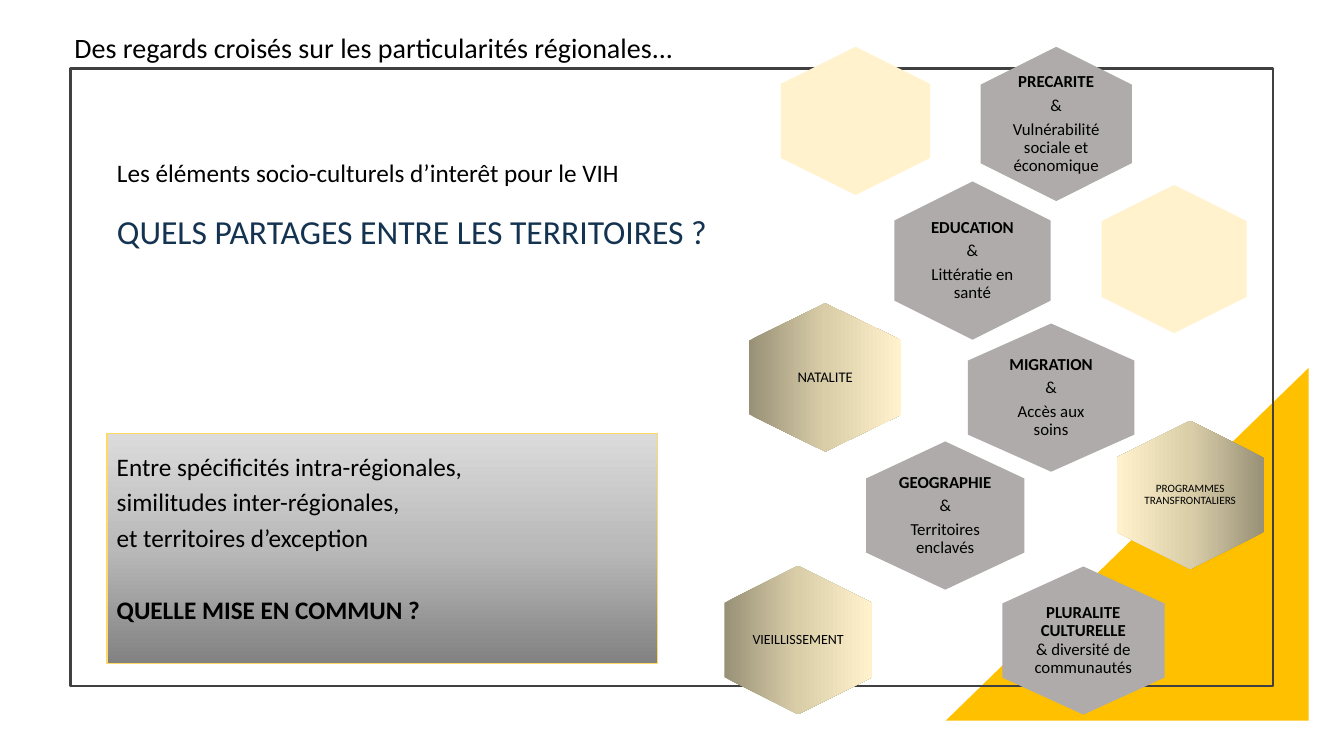
from lxml import etree
from pptx import Presentation
from pptx import util as u
from pptx.dml.color import RGBColor
from pptx.enum import shapes, text
from pptx.oxml import parse_xml
from pptx.oxml.ns import nsdecls, qn

COLORS = {
    "black": "000000", "navy": "143350", "frame": "404040", "gold": "FFC000",
    "grey": "AFABAB", "cream": "FFF2CC", "edge": "FFD966",
}
SAND = ("999177", "DACEA9", "FFF2CC")
STEEL = ("828282", "B9B9B9", "DBDBDB")
FONT = "Calibri"
LINE = 0.9
AFTER = 0.33  # paragraph gap as a share of the text size
INNER = 0.67  # label box as a share of its hexagon

# left, top, width, height before the quarter turn, fill, size, paragraphs of (text, bold)
HEXAGONS = [
    ((9.71, 0.48, 1.53, 1.5), "grey", 12,
     [[("PRECARITE", True)], [("&", False)], [("Vulnérabilité sociale et économique", False)]]),
    ((7.75, 0.46, 1.47, 1.48), "cream", 0, []),
    ((8.86, 1.81, 1.57, 1.55), "grey", 12,
     [[("EDUCATION", True)], [("&", False)], [("Littératie en santé", False)]]),
    ((10.91, 1.85, 1.47, 1.44), "cream", 0, []),
    ((9.69, 3.12, 1.47, 1.65), "grey", 12,
     [[("MIGRATION", True)], [("&", False)], [("Accès aux soins", False)]]),
    ((7.45, 2.99, 1.47, 1.51), 0, 10.5, [[("NATALITE", False)]]),
    ((8.64, 4.33, 1.47, 1.57), "grey", 12,
     [[("GEOGRAPHIE", True)], [("&", False)], [("Territoires enclavés", False)]]),
    ((11.07, 4.18, 1.47, 1.46), 180, 8, [[("PROGRAMMES TRANSFRONTALIERS", False)]]),
    ((10.01, 5.55, 1.47, 1.61), "grey", 12,
     [[("PLURALITE CULTURELLE ", True), ("& diversité de communautés", False)]]),
    ((7.18, 5.62, 1.47, 1.46), 0, 10, [[("VIEILLISSEMENT", False)]]),
]


def inches(box):
    return [u.Inches(v) for v in box]


def rgb(name):
    return RGBColor.from_string(COLORS[name])


def add_run(p, words, size, bold=False, color="black"):
    r = p.add_run()
    r.text = words
    r.font.name, r.font.size, r.font.bold = FONT, u.Pt(size), bold
    r.font.color.rgb = rgb(color)


def add_paragraphs(tf, paragraphs, size, align):
    for i, runs in enumerate(paragraphs):
        p = tf.add_paragraph() if i else tf.paragraphs[0]
        p.alignment, p.line_spacing = align, LINE
        p.space_after = u.Pt(round(size * AFTER, 1))
        for words, bold in runs:
            add_run(p, words, size, bold)


def set_margins(tf, left, top, right, bottom):
    tf.margin_left, tf.margin_top, tf.margin_right, tf.margin_bottom = inches(
        (left, top, right, bottom))


def add_shape(s, kind, box, fill=None):
    sp = s.shapes.add_shape(kind, *inches(box))
    sp.shadow.inherit = False
    sp.line.fill.background()
    if fill:
        sp.fill.solid()
        sp.fill.fore_color.rgb = rgb(fill)
    else:
        sp.fill.background()
    return sp


def set_gradient(sp, stops, angle):
    """Replace the fill by three even stops along a fixed page angle."""
    grad = parse_xml(f'<a:gradFill {nsdecls("a")} rotWithShape="0"><a:gsLst/></a:gradFill>')
    for i, color in enumerate(stops):
        gs = etree.SubElement(grad[0], qn("a:gs"), pos=str(i * 50000))
        etree.SubElement(gs, qn("a:srgbClr"), val=color)
    etree.SubElement(grad, qn("a:lin"), ang=str(angle * 60000), scaled="0")
    pr = sp.element.spPr
    pr.replace(pr.find(qn("a:noFill")), grad)


def add_backdrop(s):
    corner = add_shape(s, shapes.MSO_SHAPE.RIGHT_TRIANGLE, (9.38, 3.65, 3.6, 3.5), "gold")
    corner.element.spPr.find(qn("a:xfrm")).set("flipH", "1")
    frame = add_shape(s, shapes.MSO_SHAPE.RECTANGLE, (0.7, 0.68, 11.93, 6.13))
    frame.line.color.rgb, frame.line.width = rgb("frame"), u.Pt(1.5)


def add_title(s, box):
    title = s.shapes.title
    title.left, title.top, title.width, title.height = inches(box)
    tf = title.text_frame
    tf.word_wrap, tf.vertical_anchor = True, text.MSO_ANCHOR.TOP
    tf.auto_size = text.MSO_AUTO_SIZE.NONE
    set_margins(tf, 0.1, 0.5, 0.1, 0.05)
    lines = [("Les éléments socio-culturels d’interêt pour le VIH", 18, "black", 0),
             ("QUELS PARTAGES ENTRE LES TERRITOIRES ?", 24, "navy", 20)]
    for i, (words, size, color, before) in enumerate(lines):
        p = tf.add_paragraph() if i else tf.paragraphs[0]
        p.alignment, p.line_spacing = text.PP_ALIGN.LEFT, LINE
        p.space_before = u.Pt(before)
        add_run(p, words, size, color=color)


def add_hexagon(s, box, fill, size, paragraphs):
    """Draw a point-up hexagon; a number as fill is a gradient angle."""
    solid = isinstance(fill, str)
    sp = add_shape(s, shapes.MSO_SHAPE.HEXAGON, box, fill if solid else None)
    sp.rotation = 90
    if not solid:
        set_gradient(sp, SAND, fill)
    if not paragraphs:
        return
    left, top, length, breadth = box
    w, h = breadth * INNER, length * INNER
    label = (left + (length - w) / 2, top + (breadth - h) / 2, w, h)
    tf = s.shapes.add_textbox(*inches(label)).text_frame
    tf.word_wrap, tf.vertical_anchor = True, text.MSO_ANCHOR.MIDDLE
    set_margins(tf, *[0.05 if solid else 0] * 4)
    add_paragraphs(tf, paragraphs, size, text.PP_ALIGN.CENTER)


def add_heading(s, box):
    tf = s.shapes.add_textbox(*inches(box)).text_frame
    tf.word_wrap = True
    add_run(tf.paragraphs[0], "Des regards croisés sur les particularités régionales...", 20)


def add_question_panel(s, box):
    sp = add_shape(s, shapes.MSO_SHAPE.RECTANGLE, box)
    set_gradient(sp, STEEL, 270)
    sp.line.color.rgb, sp.line.width = rgb("edge"), u.Pt(1)
    tf = sp.text_frame
    tf.word_wrap, tf.vertical_anchor = True, text.MSO_ANCHOR.TOP
    set_margins(tf, 0.1, 0.21, 0.1, 0.05)
    add_paragraphs(tf, [
        [("Entre spécificités intra-régionales,", False)],
        [("similitudes inter-régionales,", False)],
        [("et territoires d’exception", False)],
        [("QUELLE MISE EN COMMUN ?", True)],
    ], 18, text.PP_ALIGN.LEFT)
    tf.paragraphs[-1].space_before = u.Pt(26)


def main():
    prs = Presentation()
    prs.slide_width, prs.slide_height = inches((13.33, 7.5))
    s = prs.slides.add_slide(prs.slide_layouts[5])
    add_backdrop(s)
    add_title(s, (1.06, 1.09, 6.17, 2.52))
    for hexagon in HEXAGONS:
        add_hexagon(s, *hexagon)
    add_heading(s, (0.64, 0.25, 6.17, 0.44))
    add_question_panel(s, (1.06, 4.3, 5.46, 2.28))
    prs.save("out.pptx")


if __name__ == "__main__":
    main()
